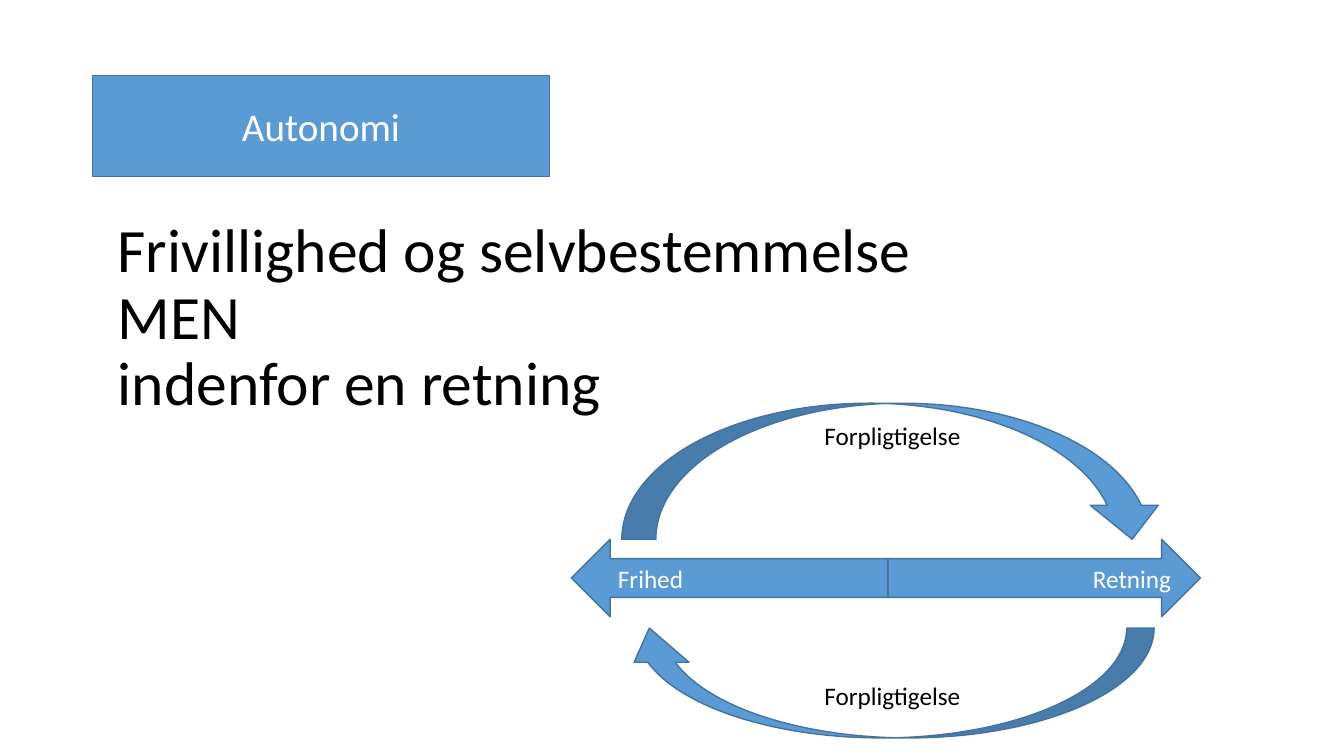
from pptx import Presentation
from pptx.dml.color import RGBColor
from pptx.enum.shapes import MSO_SHAPE as Preset
from pptx.enum.text import MSO_ANCHOR as Anchor, PP_ALIGN as Align
from pptx.oxml.ns import qn
from pptx.util import Pt

BLUE = RGBColor(0x5B, 0x9B, 0xD5)
OUTLINE = RGBColor(0x43, 0x73, 0x9E)
BLACK = RGBColor(0, 0, 0)
WHITE = RGBColor(255, 255, 255)
FONT = "Calibri"
ARROW_TOP, ARROW_HEIGHT = 385.2, 55.4
ARROWS_MEET = 634.3


def write(frame, lines, size, color, align=Align.LEFT, spacing=1.0):
    """Fill a text frame with one paragraph per line."""
    frame.word_wrap = True
    for index, line in enumerate(lines):
        para = frame.paragraphs[0] if index == 0 else frame.add_paragraph()
        para.text = line
        para.alignment = align
        para.line_spacing = spacing
        para.font.name = FONT
        para.font.size = Pt(size)
        para.font.color.rgb = color


def add_text(slide, place, lines, size, spacing=1.0):
    box = slide.shapes.add_textbox(*map(Pt, place))
    write(box.text_frame, lines, size, BLACK, spacing=spacing)


def add_blue_shape(slide, preset, place):
    shape = slide.shapes.add_shape(preset, *map(Pt, place))
    shape.shadow.inherit = False
    shape.fill.solid()
    shape.fill.fore_color.rgb = BLUE
    shape.line.color.rgb = OUTLINE
    shape.line.width = Pt(1)
    return shape


def add_labelled_shape(slide, preset, place, label, size, align):
    shape = add_blue_shape(slide, preset, place)
    shape.text_frame.vertical_anchor = Anchor.MIDDLE
    write(shape.text_frame, [label], size, WHITE, align)
    return shape


def add_cycle_arrows(slide):
    add_blue_shape(slide, Preset.CURVED_DOWN_ARROW, (444.2, 288, 388.8, 97.2))
    back = add_blue_shape(slide, Preset.CURVED_UP_ARROW, (444.2, 448.6, 380.2, 78.5))
    back.adjustments[2] = 0.312
    back._element.spPr.find(qn("a:xfrm")).set("flipH", "1")


def main():
    deck = Presentation()
    deck.slide_width, deck.slide_height = Pt(960), Pt(540)
    page = deck.slides.add_slide(deck.slide_layouts[6])

    add_text(page, (77, 153.4, 828, 152),
             ["Frivillighed og selvbestemmelse", "MEN", "indenfor en retning"],
             44, spacing=0.9)
    add_labelled_shape(page, Preset.RECTANGLE, (66.2, 54, 326.2, 72),
                       "Autonomi", 28, Align.CENTER)
    add_labelled_shape(page, Preset.RIGHT_ARROW,
                       (ARROWS_MEET, ARROW_TOP, 223.2, ARROW_HEIGHT),
                       "Retning", 18, Align.RIGHT)
    freedom = add_labelled_shape(page, Preset.LEFT_ARROW,
                                 (408.2, ARROW_TOP, ARROWS_MEET - 408.2, ARROW_HEIGHT),
                                 "Frihed", 18, Align.LEFT)
    freedom.text_frame.margin_left = Pt(19.4)
    add_cycle_arrows(page)
    for top, width in ((296.6, 173.5), (482.4, 132.5)):
        add_text(page, (581.8, top, width, 28.8), ["Forpligtigelse"], 18)

    deck.save("out.pptx")


if __name__ == "__main__":
    main()
